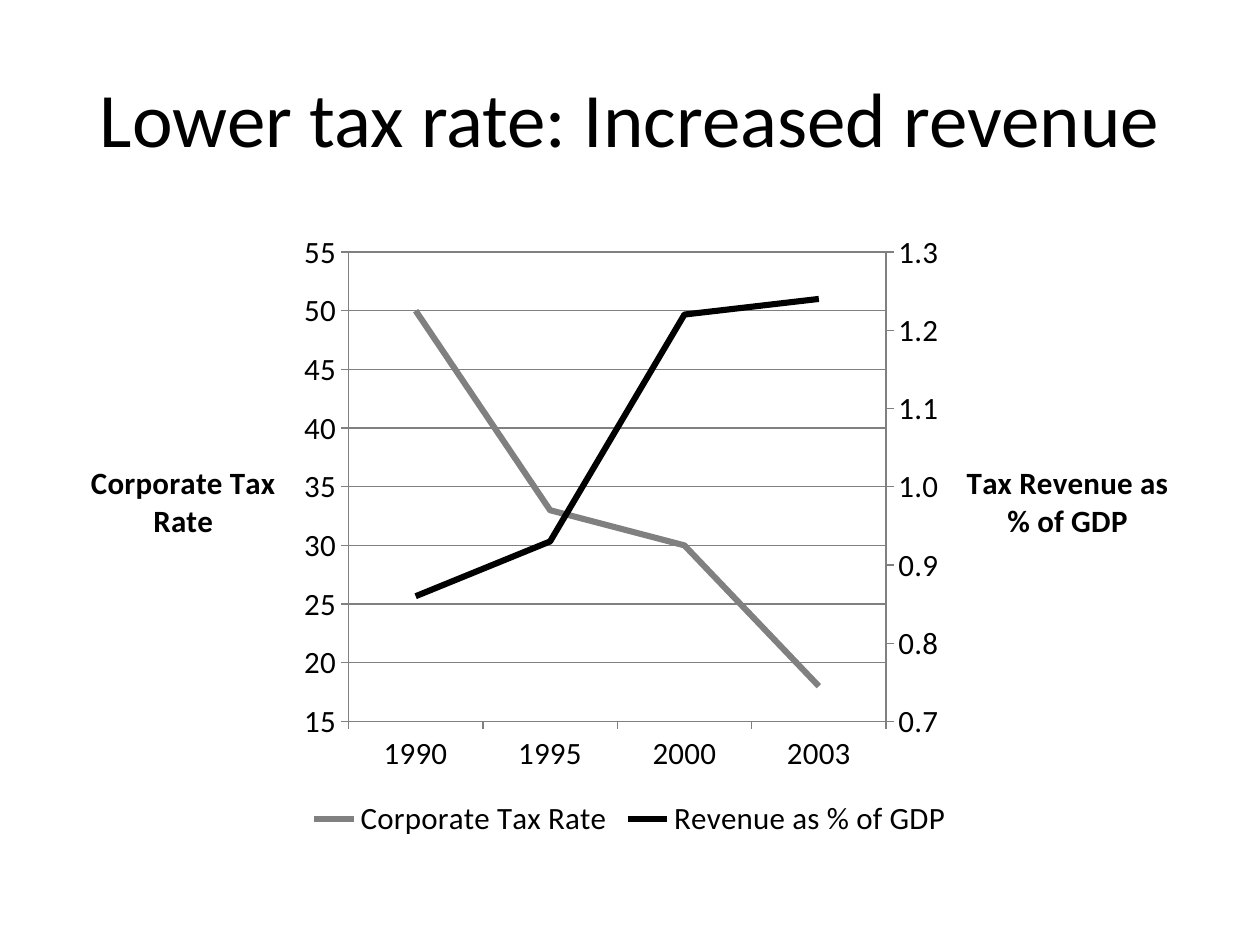
from copy import deepcopy

from pptx import Presentation
from pptx.chart.axis import ValueAxis
from pptx.chart.data import CategoryChartData
from pptx.dml.color import RGBColor
from pptx.enum.chart import XL_CHART_TYPE, XL_LEGEND_POSITION, XL_TICK_MARK
from pptx.enum.text import MSO_ANCHOR, PP_ALIGN
from pptx.util import Inches, Pt

LINE_CHART = XL_CHART_TYPE.LINE
LEGEND_BOTTOM = XL_LEGEND_POSITION.BOTTOM
TICK_OUTSIDE = XL_TICK_MARK.OUTSIDE
MIDDLE = MSO_ANCHOR.MIDDLE
CENTER = PP_ALIGN.CENTER

BLACK = RGBColor(0x00, 0x00, 0x00)
GRAY = RGBColor(0x80, 0x80, 0x80)
FONT = "Calibri"
CHART_SIZE = 17.75


def write_text(frame, text, size, bold=False):
    """Put one centred paragraph in a text frame."""
    para = frame.paragraphs[0]
    para.alignment = CENTER
    span = para.add_run()
    span.text = text
    span.font.name = FONT
    span.font.size = Pt(size)
    span.font.bold = bold
    span.font.color.rgb = BLACK


def format_value_axis(axis, title, low, high, step, number_format):
    """Set the scale, labels and horizontal title of a value axis."""
    axis.minimum_scale = low
    axis.maximum_scale = high
    axis.major_unit = step
    axis.tick_labels.number_format = number_format
    axis.tick_labels.number_format_is_linked = False
    frame = axis.axis_title.text_frame
    write_text(frame, title, CHART_SIZE, bold=True)
    body = frame._txBody.bodyPr
    body.set("rot", "0")
    body.set("vert", "horz")


deck = Presentation()
deck.slide_width = Inches(10)
deck.slide_height = Inches(7.5)
page = deck.slides.add_slide(deck.slide_layouts[6])

# Title
box = page.shapes.add_textbox(Inches(0.5), Inches(0.3), Inches(9), Inches(1.25))
box.text_frame.word_wrap = True
box.text_frame.vertical_anchor = MIDDLE
write_text(box.text_frame, "Lower tax rate: Increased revenue", 44)

# Line chart
data = CategoryChartData()
data.categories = ["1990", "1995", "2000", "2003"]
data.add_series("Corporate Tax Rate", [50, 33, 30, 18])
data.add_series("Revenue as % of GDP", [0.86, 0.93, 1.22, 1.24])
chart = page.shapes.add_chart(
    LINE_CHART, Inches(0.5), Inches(1.75), Inches(9), Inches(4.95), data
).chart
chart.has_title = False
chart.font.name = FONT
chart.font.size = Pt(CHART_SIZE)
chart.font.color.rgb = BLACK
chart.has_legend = True
chart.legend.position = LEGEND_BOTTOM
chart.legend.include_in_layout = False

for series, color in zip(chart.plots[0].series, (GRAY, BLACK)):
    series.smooth = False
    series.format.line.color.rgb = color
    series.format.line.width = Pt(3.5)

left_axis = chart.value_axis
for axis in (chart.category_axis, left_axis):
    axis.major_tick_mark = TICK_OUTSIDE
    axis.format.line.color.rgb = GRAY
    axis.format.line.width = Pt(0.75)

# Second plot for revenue, with its own pair of axes
left_plot = chart.plots[0]._element
left_category = chart.category_axis._element
left_value = left_axis._element
right_plot, right_category, right_value = map(
    deepcopy, (left_plot, left_category, left_value)
)
left_plot.remove(left_plot.xpath("c:ser")[1])
right_plot.remove(right_plot.xpath("c:ser")[0])
left_plot.addnext(right_plot)
left_value.addnext(right_value)
right_value.addnext(right_category)

CATEGORY_ID, VALUE_ID = "50010", "50020"
for element, ids in (
    (right_plot, (CATEGORY_ID, VALUE_ID)),
    (right_category, (CATEGORY_ID, VALUE_ID)),
    (right_value, (VALUE_ID, CATEGORY_ID)),
):
    for reference, axis_id in zip(element.xpath("c:axId | c:crossAx"), ids):
        reference.set("val", axis_id)
right_category.xpath("c:delete")[0].set("val", "1")
right_value.xpath("c:axPos")[0].set("val", "r")
right_value.xpath("c:crosses")[0].set("val", "max")

# Value axes
right_axis = ValueAxis(right_value)
right_axis.has_major_gridlines = False
format_value_axis(left_axis, "Corporate Tax Rate", 15, 55, 5, "General")
format_value_axis(right_axis, "Tax Revenue as % of GDP", 0.7, 1.3, 0.1, "#,##0.0")
gridline = left_axis.major_gridlines.format.line
gridline.color.rgb = GRAY
gridline.width = Pt(0.75)

deck.save("out.pptx")
